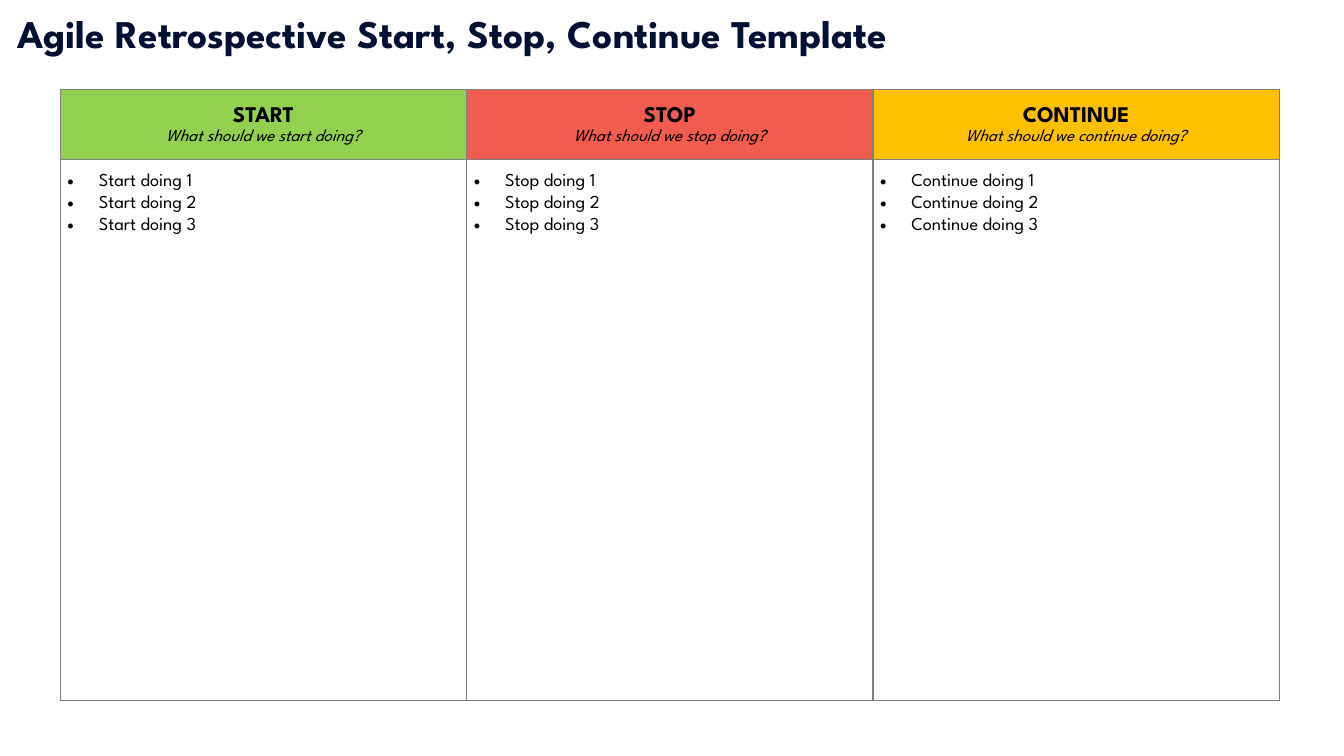
from dataclasses import dataclass

from lxml.etree import SubElement
from pptx import Presentation
from pptx.dml.color import RGBColor
from pptx.enum.text import MSO_ANCHOR as Anchor, MSO_AUTO_SIZE as AutoSize, PP_ALIGN as Align
from pptx.oxml.ns import qn
from pptx.util import Cm, Pt

FONT = "League Spartan"
NAVY = RGBColor(0x01, 0x10, 0x33)
BLACK = RGBColor(0x00, 0x00, 0x00)
WHITE = RGBColor(0xFF, 0xFF, 0xFF)
GREY = RGBColor(0x80, 0x80, 0x80)
GREEN = RGBColor(0x92, 0xD0, 0x50)
RED = RGBColor(0xF0, 0x5C, 0x4F)
AMBER = RGBColor(0xFF, 0xC0, 0x00)

TITLE_FORMAT = {"size": Pt(28), "bold": True}
HEADING_FORMAT = {"size": Pt(16), "bold": True, "italic": False}
QUESTION_FORMAT = {"size": Pt(12), "bold": False, "italic": True}
ITEM_FORMAT = {"size": Pt(13), "bold": False, "italic": False}

COL_WIDTH = Cm(10.24)
ROW_HEIGHTS = [Cm(1.75), Cm(13.64)]
INDENT = Cm(0.79)


@dataclass
class Column:
    action: str
    color: RGBColor

    @property
    def question(self) -> str:
        return f"What should we {self.action.lower()} doing?"

    @property
    def items(self) -> list[str]:
        return [f"{self.action} doing {n}" for n in range(1, 4)]


COLUMNS = [Column("Start", GREEN), Column("Stop", RED), Column("Continue", AMBER)]


def add_run(p, text: str, values: dict, color: RGBColor = BLACK) -> None:
    r = p.add_run()
    r.text = text
    r.font.name = FONT
    r.font.color.rgb = color
    for name, value in values.items():
        setattr(r.font, name, value)


def add_bullet(p) -> None:
    pPr = p._p.get_or_add_pPr()
    pPr.set("marL", str(INDENT))
    pPr.set("indent", str(-INDENT))
    SubElement(pPr, qn("a:buFont"), typeface="Arial")
    SubElement(pPr, qn("a:buChar"), char="•")


def style_cell(cell, color: RGBColor, margin_y: int, anchor: Anchor) -> None:
    """Set borders, fill, margins and anchor of a cell."""
    tcPr = cell._tc.get_or_add_tcPr()
    for side in ("lnL", "lnR", "lnT", "lnB"):
        ln = SubElement(tcPr, qn(f"a:{side}"), w=str(Pt(1)))
        SubElement(SubElement(ln, qn("a:solidFill")), qn("a:srgbClr"), val=str(GREY))
    cell.fill.solid()
    cell.fill.fore_color.rgb = color
    values = {
        "margin_left": Cm(0.18), "margin_right": Cm(0.18),
        "margin_top": margin_y, "margin_bottom": margin_y,
        "vertical_anchor": anchor,
    }
    for name, value in values.items():
        setattr(cell, name, value)


def fill_header(cell, column: Column) -> None:
    style_cell(cell, column.color, Cm(0), Anchor.MIDDLE)
    tf = cell.text_frame
    lines = [(column.action.upper(), HEADING_FORMAT), (column.question, QUESTION_FORMAT)]
    for i, (text, values) in enumerate(lines):
        p = tf.add_paragraph() if i else tf.paragraphs[0]
        p.alignment = Align.CENTER
        p.line_spacing = 1.15
        add_run(p, text, values)


def fill_list(cell, column: Column) -> None:
    style_cell(cell, WHITE, Cm(0.25), Anchor.TOP)
    tf = cell.text_frame
    for i, item in enumerate(column.items):
        p = tf.add_paragraph() if i else tf.paragraphs[0]
        add_bullet(p)
        p.line_spacing = 1.3
        add_run(p, item, ITEM_FORMAT)


def add_title(s, text: str) -> None:
    sp = s.shapes.title
    sp.left, sp.top, sp.width, sp.height = Cm(0.18), Cm(0.1), Cm(30.02), Cm(1.45)
    tf = sp.text_frame
    tf.word_wrap = True
    tf.auto_size = AutoSize.SHAPE_TO_FIT_TEXT
    tf.vertical_anchor = Anchor.TOP
    p = tf.paragraphs[0]
    p.alignment = Align.LEFT
    add_run(p, text, TITLE_FORMAT, NAVY)


def add_board(s) -> None:
    table = s.shapes.add_table(
        len(ROW_HEIGHTS), len(COLUMNS), Cm(1.52), Cm(2.26),
        COL_WIDTH * len(COLUMNS), sum(ROW_HEIGHTS),
    ).table
    table.first_row = table.horz_banding = False
    for row, height in zip(table.rows, ROW_HEIGHTS):
        row.height = height
    for i, column in enumerate(COLUMNS):
        table.columns[i].width = COL_WIDTH
        fill_header(table.cell(0, i), column)
        fill_list(table.cell(1, i), column)


def main() -> None:
    prs = Presentation()
    prs.slide_width, prs.slide_height = Cm(33.87), Cm(19.05)
    s = prs.slides.add_slide(prs.slide_layouts[5])
    add_title(s, "Agile Retrospective Start, Stop, Continue Template")
    add_board(s)
    prs.save("out.pptx")


if __name__ == "__main__":
    main()
